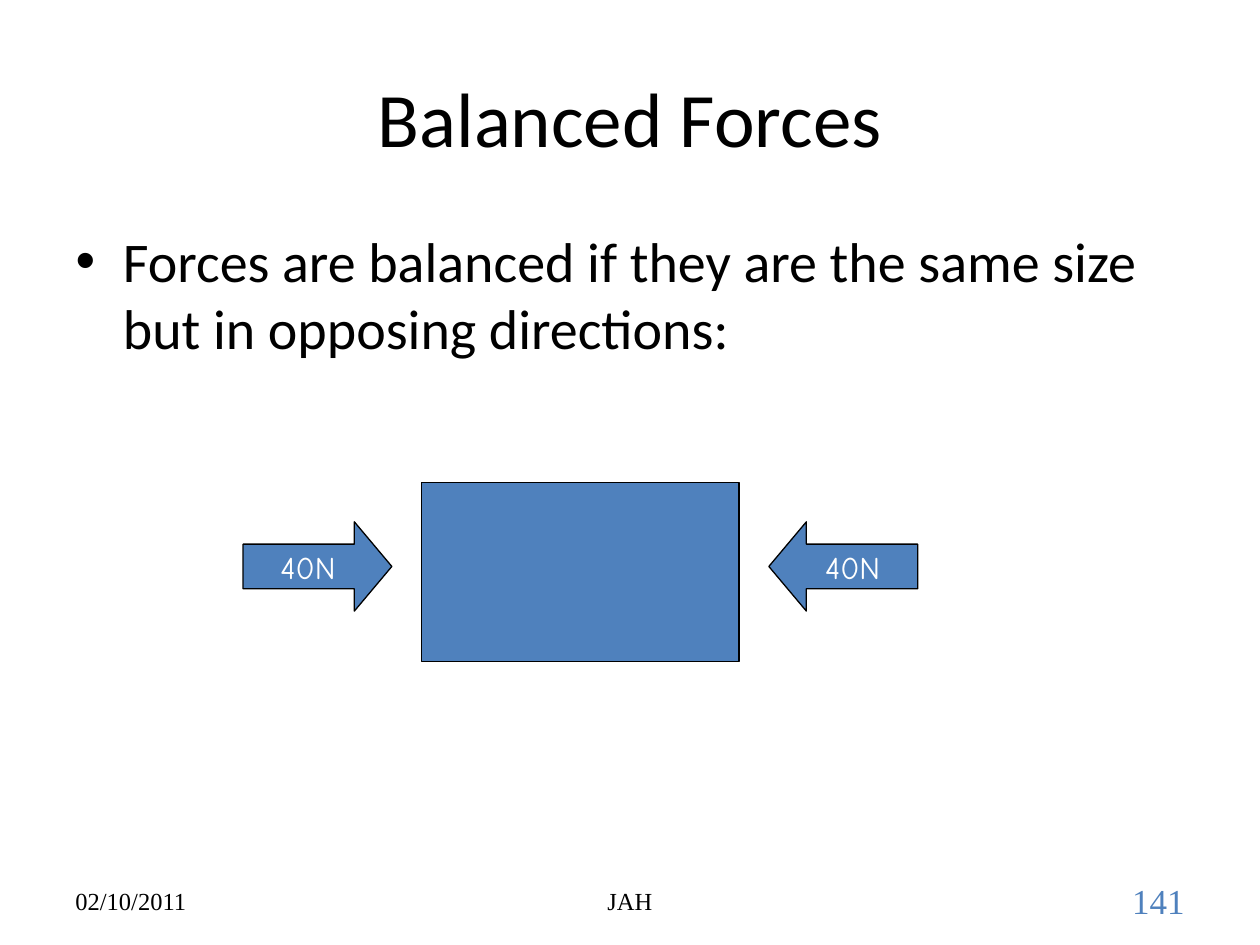
from pptx import Presentation
from pptx.dml.color import RGBColor
from pptx.enum.shapes import MSO_SHAPE
from pptx.enum.text import MSO_ANCHOR, PP_ALIGN
from pptx.util import Cm, Pt

RECT, RIGHT, LEFT = MSO_SHAPE.RECTANGLE, MSO_SHAPE.RIGHT_ARROW, MSO_SHAPE.LEFT_ARROW
MID, TOP = MSO_ANCHOR.MIDDLE, MSO_ANCHOR.TOP
START, CENTER, END = PP_ALIGN.LEFT, PP_ALIGN.CENTER, PP_ALIGN.RIGHT
HUES = {"ink": "000000", "blue": "4F81BD", "white": "FFFFFF"}


def hue(name):
    """Return the named colour."""
    return RGBColor.from_string(HUES[name])


def place(item, box):
    """Move an item to a box of left, top, width and height in cm."""
    for name, size in zip(("left", "top", "width", "height"), box):
        setattr(item, name, Cm(size))


def write(item, text, font, size, color="ink", align=START, anchor=MID, wrap=True):
    """Put one formatted paragraph into an item."""
    frame = item.text_frame
    frame.text = text
    frame.word_wrap = wrap
    frame.vertical_anchor = anchor
    para = frame.paragraphs[0]
    para.alignment = align
    run = para.runs[0]
    for name, value in {"name": font, "size": Pt(size)}.items():
        setattr(run.font, name, value)
    run.font.color.rgb = hue(color)


def add_block(slide, kind, box):
    """Add a blue shape with a thin dark outline."""
    block = slide.shapes.add_shape(kind, *map(Cm, box))
    block.shadow.inherit = False
    block.fill.solid()
    block.fill.fore_color.rgb = hue("blue")
    block.line.color.rgb = hue("ink")
    block.line.width = Pt(0.75)
    return block


def add_text(slide, box):
    """Fill the title and the bulleted body within a box."""
    left, top, width, height = box
    title, body = slide.placeholders
    place(title, (left, top, width, 3.18))
    write(title, "Balanced Forces", "Calibri", 44, align=CENTER)
    place(body, (left, top + 3.68, width, height - 3.68))
    write(body, "Forces are balanced if they are the same size "
          "but in opposing directions:", "Calibri", 32, anchor=TOP)


def add_forces(slide, box):
    """Draw a block pushed from both sides by equal arrows."""
    left, top, width, height = box
    long, thick, gap = 3, 1.8, 0.6
    side = long + gap
    add_block(slide, RECT, (left + side, top, width - 2 * side, height))
    for kind, x in ((RIGHT, left), (LEFT, left + width - long)):
        arrow = add_block(slide, kind, (x, top + 0.79, long, thick))
        arrow.adjustments[0] = 0.5
        arrow.adjustments[1] = 0.42
        write(arrow, "40N", "Comic Neue", 18, "white", CENTER, wrap=False)


def add_footer(slide, box):
    """Set date, author and page number along the bottom."""
    left, top, width, height = box
    side, mid = 5.93, 8.04
    parts = (
        (0, side, "02/10/2011", 14, "ink", START),
        ((width - mid) / 2, mid, "JAH", 14, "ink", CENTER),
        (width - side, side, "141", 20, "blue", END),
    )
    for x, wide, text, size, color, align in parts:
        note = slide.shapes.add_textbox(*map(Cm, (left + x, top, wide, height)))
        write(note, text, "Times New Roman", size, color, align)


def main():
    """Build and save the slide."""
    deck = Presentation()
    deck.slide_width, deck.slide_height = Cm(25.4), Cm(19.05)
    slide = deck.slides.add_slide(deck.slide_layouts[1])
    add_text(slide, (1.27, 0.76, 22.86, 16.26))
    add_forces(slide, (4.9, 9.73, 13.6, 3.6))
    add_footer(slide, (1.27, 17.65, 22.86, 1.02))
    deck.save("out.pptx")


if __name__ == "__main__":
    main()
